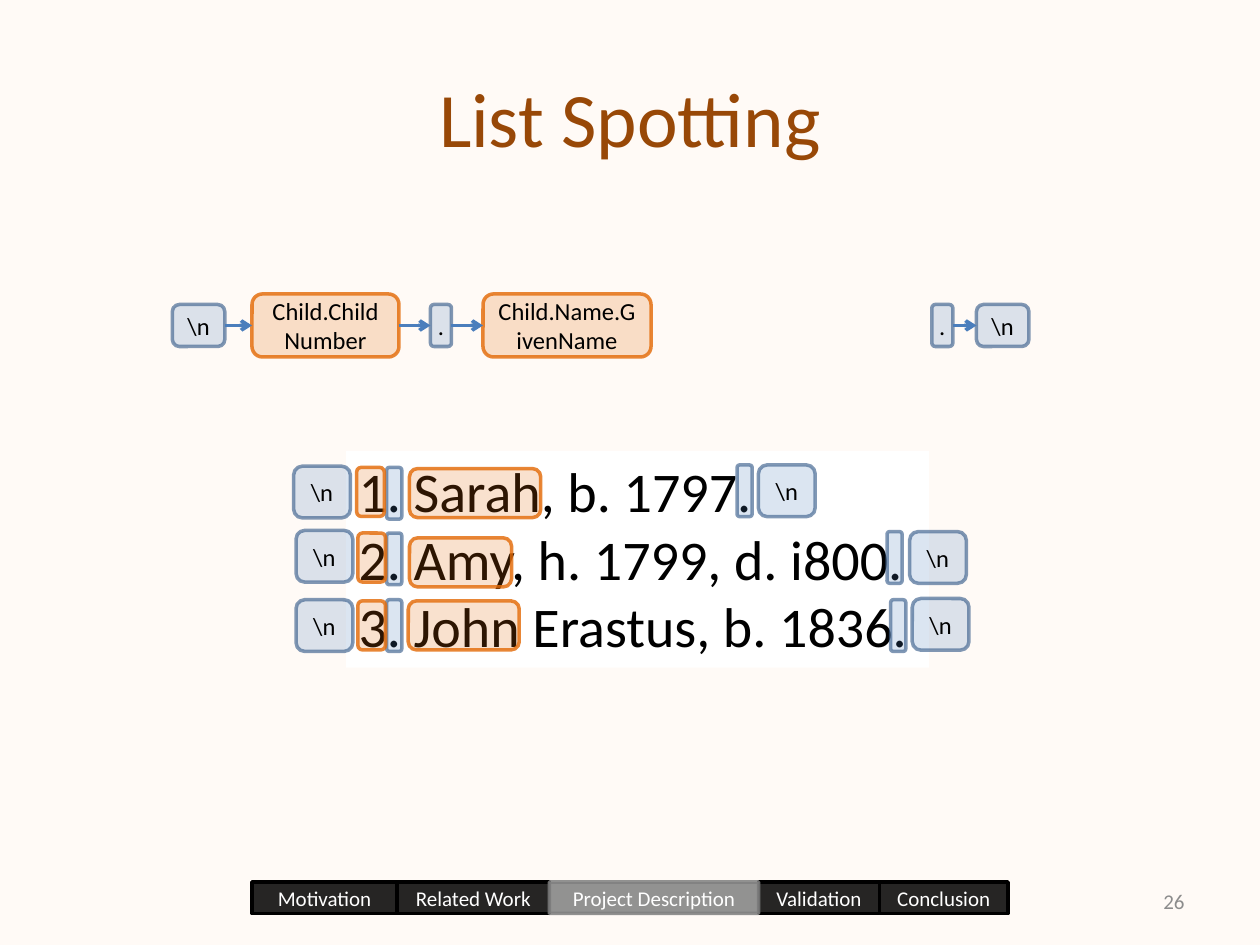
from pptx import Presentation
from pptx.dml.color import RGBColor
from pptx.enum.shapes import MSO_CONNECTOR, MSO_SHAPE
from pptx.enum.text import MSO_ANCHOR, PP_ALIGN
from pptx.oxml.ns import qn
from pptx.util import Pt
from lxml.etree import SubElement

# Content
TITLE = "List Spotting"
PAGE = "26"
LINES = ["1. Sarah, b. 1797.", "2. Amy, h. 1799, d. i800.",
         "3. John Erastus, b. 1836."]
# Each chain is linked by arrows: style, text, left, width, height
CHAINS = [
    [("sign", "\\n", 98.5, 30, 24), ("tag", "Child.ChildNumber", 144, 84, 36),
     ("sign", ".", 246, 12, 24), ("tag", "Child.Name.GivenName", 276, 96, 36)],
    [("sign", ".", 532.5, 12, 24), ("sign", "\\n", 558, 30, 24)],
]
CHAIN_Y = 186
# Marks on the list: role, then left and top for each line
MARKS = {
    "break": [(167.8, 266.4), (169.2, 303.1), (169.2, 342.7),
              (433.4, 265.7), (519.8, 303.8), (521.3, 342)],
    "dot": [(221, 267.1), (221, 304.6), (221, 342.7),
            (421.2, 265.7), (506.9, 303.8), (509, 342.7)],
    "number": [(203.8, 267.1), (204.5, 304.6), (204.5, 343.4)],
    "Sarah": [(234, 267.8)],
    "Amy": [(234, 307.4)],
    "John": [(233.3, 343.4)],
}
# Role: style, text, width, height
ROLES = {
    "break": ("sign", "\\n", 32.4, 29.5),
    "dot": ("sign", "", 8.6, 29.5),
    "number": ("tag", "", 15.8, 28),
    "Sarah": ("tag", "", 75, 28),
    "Amy": ("tag", "", 58.3, 28),
    "John": ("tag", "", 63.4, 28),
}
NAV = [("Motivation", 83), ("Related Work", 87), ("Project Description", 119.5),
       ("Validation", 69), ("Conclusion", 73.5)]
NOW = "Project Description"

HEX = {"back": "FFFAF6", "title": "984807", "page": "8C8C8C", "white": "FFFFFF",
       "black": "000000", "gray": "808080", "blue": "4F81BD", "navy": "3A5F8C",
       "orange": "E46C0A", "arrow": "4B7EBC"}
# Style: fill, fill opacity, line, line opacity, text colour, text size, inset
STYLES = {
    "sign": ("blue", 20, "navy", 64, "black", 14, 0),
    "tag": ("orange", 20, "orange", 82, "black", 14, 7.2),
    "nav": ("black", 85, "black", 100, "white", 12, 0),
    "now": ("gray", 85, "gray", 85, "white", 12, 0),
}


def rgb(name):
    return RGBColor.from_string(HEX[name])


def paint(fill, name, alpha=100):
    fill.solid()
    fill.fore_color.rgb = rgb(name)
    if alpha < 100:
        tint = fill._xPr.find(qn("a:solidFill"))[0]
        SubElement(tint, qn("a:alpha"), val=str(alpha * 1000))


def write(shape, lines, color, size, align=PP_ALIGN.CENTER,
          anchor=MSO_ANCHOR.MIDDLE, inset=7.2):
    frame = shape.text_frame
    form = {"word_wrap": True, "vertical_anchor": anchor,
            "margin_left": Pt(inset), "margin_right": Pt(inset),
            "margin_top": Pt(inset / 2), "margin_bottom": Pt(inset / 2)}
    for key, value in form.items():
        setattr(frame, key, value)
    frame.text = "\n".join(lines)
    for para in frame.paragraphs:
        para.alignment = align
        for key, value in {"name": "Calibri", "size": Pt(size)}.items():
            setattr(para.font, key, value)
        for run in para.runs:
            run.font.color.rgb = rgb(color)


def label(slide, text, spot, *style):
    box = slide.shapes.add_textbox(*map(Pt, spot))
    write(box, [text], *style)


def block(slide, kind, text, spot, style):
    fill, clear, edge, dim, ink, size, inset = STYLES[style]
    shape = slide.shapes.add_shape(kind, *map(Pt, spot))
    shape.shadow.inherit = False
    paint(shape.fill, fill, clear)
    paint(shape.line.fill, edge, dim)
    shape.line.width = Pt(2)
    if text:
        write(shape, [text], ink, size, inset=inset)


def arrow(slide, start, end, y):
    link = slide.shapes.add_connector(
        MSO_CONNECTOR.STRAIGHT, Pt(start), Pt(y), Pt(end), Pt(y))
    paint(link.line.fill, "arrow")
    link.line.width = Pt(2)
    SubElement(link.line._get_or_add_ln(), qn("a:tailEnd"), type="arrow")
    SubElement(link._element.spPr, qn("a:effectLst"))


def main():
    deck = Presentation()
    deck.slide_width, deck.slide_height = Pt(720), Pt(540)
    slide = deck.slides.add_slide(deck.slide_layouts[6])
    paint(slide.background.fill, "back")

    # Title and page number
    label(slide, TITLE, (36, 21.6, 648, 90), "title", 44)
    label(slide, PAGE, (516, 500.5, 168, 28.75), "page", 12, PP_ALIGN.RIGHT)

    # Section bar, with the current section on top
    left, cells = 144, []
    for text, width in NAV:
        cells.append((text, (left, 504, width, 18)))
        left += width
    for text, spot in sorted(cells, key=lambda cell: cell[0] == NOW):
        style = "now" if text == NOW else "nav"
        block(slide, MSO_SHAPE.RECTANGLE, text, spot, style)

    # List text
    sheet = slide.shapes.add_textbox(Pt(197.8), Pt(257.6), Pt(333), Pt(124))
    paint(sheet.fill, "white")
    write(sheet, LINES, "black", 32, PP_ALIGN.LEFT, MSO_ANCHOR.TOP)

    # Marks over the list
    for role, spots in MARKS.items():
        style, text, wide, high = ROLES[role]
        for x, y in spots:
            block(slide, MSO_SHAPE.ROUNDED_RECTANGLE, text, (x, y, wide, high), style)

    # Pattern chains
    for chain in CHAINS:
        for style, text, x, wide, high in chain:
            spot = (x, CHAIN_Y - high / 2, wide, high)
            block(slide, MSO_SHAPE.ROUNDED_RECTANGLE, text, spot, style)
        for one, two in zip(chain, chain[1:]):
            arrow(slide, one[2] + one[3], two[2], CHAIN_Y)

    deck.save("out.pptx")


if __name__ == "__main__":
    main()
